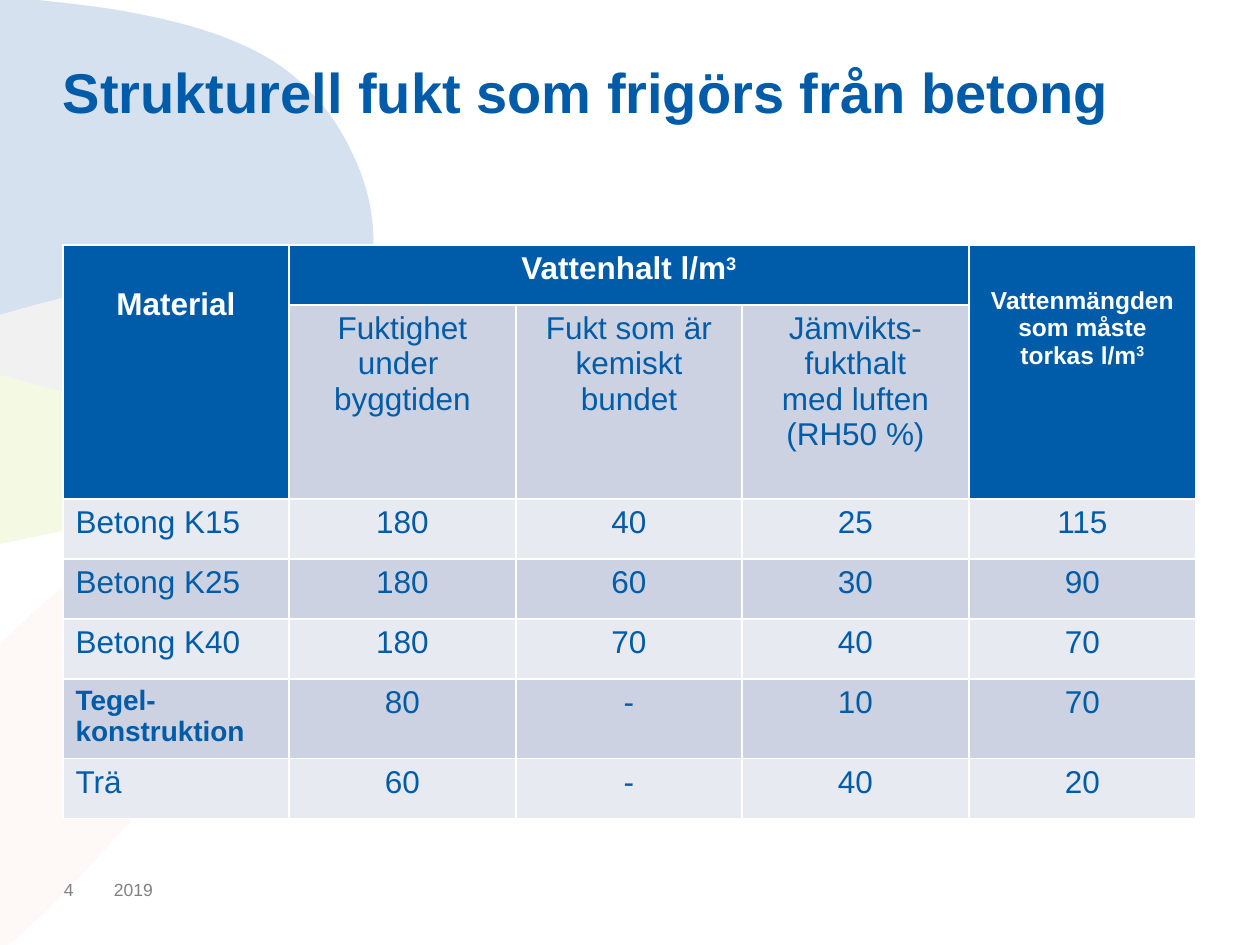
from dataclasses import dataclass
from itertools import pairwise

from lxml import etree
from pptx import Presentation
from pptx.dml.color import RGBColor
from pptx.enum.text import MSO_ANCHOR, PP_ALIGN
from pptx.oxml.ns import qn
from pptx.slide import Slide
from pptx.table import _Cell
from pptx.text.text import TextFrame
from pptx.util import Emu, Pt

TOP, MIDDLE = MSO_ANCHOR.TOP, MSO_ANCHOR.MIDDLE
LEFT, CENTER, JUSTIFY = PP_ALIGN.LEFT, PP_ALIGN.CENTER, PP_ALIGN.JUSTIFY
PX_PER_INCH = 126
FONT = "Arial"
COLORS = {
    "blue": "005CA8", "white": "FFFFFF", "gray": "808080",
    "band_dark": "CCD2E1", "band_light": "E7EAF1",
    "petal_blue": "D6E1F0", "petal_gray": "F1F1F1",
    "petal_green": "F3F9E3", "petal_orange": "FEF9F7",
}
Point = tuple[float, float]


@dataclass(frozen=True)
class Run:
    text: str
    size: int = 18
    color: str = "blue"
    bold: bool = False
    superscript: bool = False


@dataclass(frozen=True)
class Label:
    left: int
    top: int
    width: int
    height: int
    run: Run
    anchor: MSO_ANCHOR = MIDDLE
    line_spacing: float = 1.0


@dataclass(frozen=True)
class HeaderCell:
    row: int
    column: int
    paragraphs: list[list[Run]]
    fill: str = "blue"
    last_row: int = 0
    last_column: int = 0
    margin_top: int = 6


@dataclass(frozen=True)
class Petal:
    color: str
    edges: list[list[Point]]


ORANGE_EDGE = [(0, 645), (57, 592), (112, 561), (175, 548), (209, 553), (236, 564),
               (253, 583), (261, 606), (256, 639), (238, 679), (205, 731), (164, 782),
               (112, 842), (55, 902), (21, 934), (8, 945)]
GREEN_EDGE = [(357, 316), (367, 330), (373, 348), (373, 363), (367, 382), (352, 403),
              (321, 431), (276, 461), (219, 488), (161, 507), (95, 524), (0, 544)]
GRAY_EDGE = [(357, 316), (344, 338), (319, 367), (282, 392), (237, 410), (197, 413),
             (156, 411), (92, 399), (0, 375)]
SHARED_EDGE = [(0, 315), (59, 299), (118, 287), (178, 280), (224, 277), (275, 280),
               (319, 292), (347, 307), (357, 316)]
BLUE_EDGE = [(357, 316), (368, 287), (373, 253), (372, 218), (363, 179), (344, 137),
             (319, 101), (282, 67), (236, 42), (179, 23), (111, 9), (38, 0)]
PETALS = [
    Petal("petal_orange", [ORANGE_EDGE, [(0, 945)]]),
    Petal("petal_green", [GREEN_EDGE, GRAY_EDGE[::-1]]),
    Petal("petal_blue", [SHARED_EDGE, BLUE_EDGE, [(0, 0)]]),
    Petal("petal_gray", [SHARED_EDGE, GRAY_EDGE]),
]
LABELS = [
    Label(63, 65, 1134, 159, Run("Strukturell fukt som frigörs från betong", 32, bold=True),
          TOP, 0.9),
    Label(114, 879, 119, 20, Run("2019", 10, "gray")),
    Label(64, 879, 49, 20, Run("4", 10, "gray")),
]
TABLE_LEFT, TABLE_TOP, TABLE_WIDTH = 63, 245, 1133
ROW_HEIGHTS = [60, 194, 60, 60, 60, 75, 60]
COLUMN_COUNT = 5
HEADER_CELLS = [
    HeaderCell(0, 0, [[Run("Material", 18, "white", True)]], last_row=1, margin_top=42),
    HeaderCell(0, 1, [[Run("Vattenhalt l/m", 18, "white", True),
                       Run("3", 18, "white", True, True)]], last_column=3),
    HeaderCell(0, 4, [[Run("Vattenmängden som måste torkas l/m", 14, "white", True),
                       Run("3", 14, "white", True, True)]], last_row=1, margin_top=42),
    HeaderCell(1, 1, [[Run("Fuktighet under \nbyggtiden")]], "band_dark"),
    HeaderCell(1, 2, [[Run("Fukt som är kemiskt bundet")]], "band_dark"),
    HeaderCell(1, 3, [[Run("Jämvikts-fukthalt")], [Run("med luften (RH50 %)")]], "band_dark"),
]
MATERIAL_ROWS = [
    (Run("Betong K15"), "180", "40", "25", "115"),
    (Run("Betong K25"), "180", "60", "30", "90"),
    (Run("Betong K40"), "180", "70", "40", "70"),
    (Run("Tegel-konstruktion", 16, bold=True), "80", "-", "10", "70"),
    (Run("Trä"), "60", "-", "40", "20"),
]


def px(value: float) -> Emu:
    return Emu(round(value * 914400 / PX_PER_INCH))


def rgb(name: str) -> RGBColor:
    return RGBColor.from_string(COLORS[name])


def smooth(points: list[Point], steps: int = 5) -> list[Point]:
    padded = [points[0], *points, points[-1]]
    curve = [points[0]]
    for index in range(len(points) - 1):
        window = padded[index:index + 4]
        for step in range(1, steps + 1):
            t = step / steps
            curve.append(tuple(
                b + 0.5 * t * (c - a + t * (2 * a - 5 * b + 4 * c - d
                                            + t * (3 * (b - c) + d - a)))
                for a, b, c, d in zip(*window)))
    return curve


def draw_petal(slide: Slide, petal: Petal) -> None:
    outline = [(px(x), px(y)) for edge in petal.edges for x, y in smooth(edge)]
    builder = slide.shapes.build_freeform(*outline[0])
    builder.add_line_segments(outline[1:], close=True)
    shape = builder.convert_to_shape()
    shape.shadow.inherit = False
    shape.fill.solid()
    shape.fill.fore_color.rgb = rgb(petal.color)
    shape.line.fill.background()


def write_text(frame: TextFrame, paragraphs: list[list[Run]], alignment: PP_ALIGN,
               line_spacing: float = 1.0) -> None:
    for index, runs in enumerate(paragraphs):
        paragraph = frame.add_paragraph() if index else frame.paragraphs[0]
        paragraph.alignment = alignment
        paragraph.line_spacing = line_spacing
        for item in runs:
            for line_index, line in enumerate(item.text.split("\n")):
                if line_index:
                    paragraph.add_line_break()
                run = paragraph.add_run()
                run.text = line
                run.font.name = FONT
                run.font.size = Pt(item.size)
                run.font.bold = item.bold
                run.font.color.rgb = rgb(item.color)
                if item.superscript:
                    run._r.get_or_add_rPr().set("baseline", "30000")


def draw_label(slide: Slide, label: Label) -> None:
    box = slide.shapes.add_textbox(
        px(label.left), px(label.top), px(label.width), px(label.height))
    frame = box.text_frame
    frame.word_wrap = True
    frame.vertical_anchor = label.anchor
    frame.margin_left = frame.margin_right = frame.margin_top = frame.margin_bottom = 0
    write_text(frame, [[label.run]], LEFT, label.line_spacing)


def style_cell(cell: _Cell, fill: str) -> None:
    properties = cell._tc.get_or_add_tcPr()
    for side in ("lnL", "lnR", "lnT", "lnB"):
        border = etree.SubElement(properties, qn(f"a:{side}"), w=str(Pt(1)))
        solid = etree.SubElement(border, qn("a:solidFill"))
        etree.SubElement(solid, qn("a:srgbClr"), val=COLORS["white"])
    cell.fill.solid()
    cell.fill.fore_color.rgb = rgb(fill)


def draw_table(slide: Slide) -> None:
    table = slide.shapes.add_table(
        len(ROW_HEIGHTS), COLUMN_COUNT, px(TABLE_LEFT), px(TABLE_TOP),
        px(TABLE_WIDTH), px(sum(ROW_HEIGHTS))).table
    table.first_row = table.horz_banding = False
    cuts = [TABLE_WIDTH * index // COLUMN_COUNT for index in range(COLUMN_COUNT + 1)]
    for column, (start, end) in zip(table.columns, pairwise(cuts)):
        column.width = px(end - start)
    for row, height in zip(table.rows, ROW_HEIGHTS):
        row.height = px(height)
    for header in HEADER_CELLS:
        cell = table.cell(header.row, header.column)
        last_row = max(header.row, header.last_row)
        last_column = max(header.column, header.last_column)
        if (last_row, last_column) != (header.row, header.column):
            cell.merge(table.cell(last_row, last_column))
        for row in range(header.row, last_row + 1):
            for column in range(header.column, last_column + 1):
                style_cell(table.cell(row, column), header.fill)
        cell.margin_top = px(header.margin_top)
        write_text(cell.text_frame, header.paragraphs, CENTER)
    for row, (material, *values) in enumerate(MATERIAL_ROWS, start=2):
        for column, run in enumerate([material, *map(Run, values)]):
            cell = table.cell(row, column)
            style_cell(cell, "band_dark" if row % 2 else "band_light")
            write_text(cell.text_frame, [[run]], CENTER if column else JUSTIFY)


def main() -> None:
    presentation = Presentation()
    presentation.slide_width, presentation.slide_height = px(1260), px(945)
    slide = presentation.slides.add_slide(presentation.slide_layouts[6])
    for petal in PETALS:
        draw_petal(slide, petal)
    for label in LABELS:
        draw_label(slide, label)
    draw_table(slide)
    presentation.save("out.pptx")


if __name__ == "__main__":
    main()
